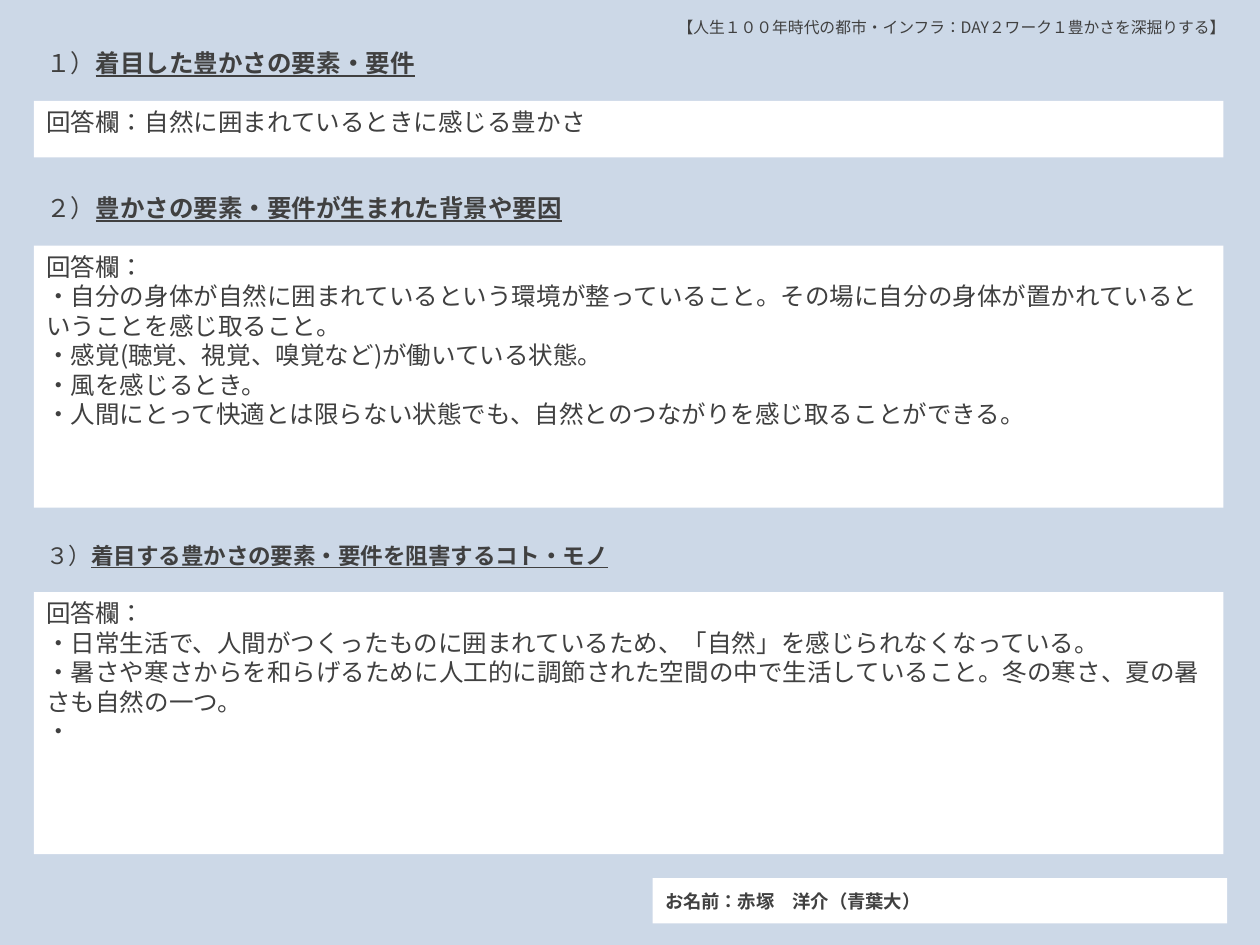
from lxml import etree
from pptx import Presentation
from pptx.dml.color import RGBColor
from pptx.enum.lang import MSO_LANGUAGE_ID
from pptx.enum.shapes import MSO_SHAPE
from pptx.enum.text import MSO_ANCHOR, PP_ALIGN
from pptx.oxml.ns import qn
from pptx.util import Inches, Pt

RECTANGLE = MSO_SHAPE.RECTANGLE
TOP, MIDDLE = MSO_ANCHOR.TOP, MSO_ANCHOR.MIDDLE
LEFT = PP_ALIGN.LEFT
JAPANESE = MSO_LANGUAGE_ID.JAPANESE
FONT = "Noto Sans CJK JP"
COLORS = {"background": "CCD8E7", "panel": "FFFFFF", "text": "404040"}

presentation = Presentation()
presentation.slide_width = Inches(10)
presentation.slide_height = Inches(7.5)
COLUMN = presentation.slide_width / 100
ROW = presentation.slide_height / 75
slide = presentation.slides.add_slide(presentation.slide_layouts[6])
slide.background.fill.solid()
slide.background.fill.fore_color.rgb = RGBColor.from_string(COLORS["background"])


def add_text(paragraphs, box, size=14, bold=False, panel=False, anchor=TOP, wrap=True):
    left, top, width, height = box
    place = [int(value) for value in (left * COLUMN, top * ROW, width * COLUMN, height * ROW)]
    if panel:
        shape = slide.shapes.add_shape(RECTANGLE, *place)
        shape.shadow.inherit = False
        shape.fill.solid()
        shape.fill.fore_color.rgb = RGBColor.from_string(COLORS["panel"])
        shape.line.fill.background()
    else:
        shape = slide.shapes.add_textbox(*place)
    frame = shape.text_frame
    frame.word_wrap = wrap
    frame.vertical_anchor = anchor
    for index, runs in enumerate(paragraphs):
        paragraph = frame.add_paragraph() if index else frame.paragraphs[0]
        paragraph.alignment = LEFT
        paragraph.line_spacing = 1.0
        for text, underlined in runs:
            run = paragraph.add_run()
            run.text = text
            font = run.font
            font.name = FONT
            font.size = Pt(size)
            font.bold = bold or underlined
            font.underline = underlined
            font.language_id = JAPANESE
            font.color.rgb = RGBColor.from_string(COLORS["text"])
            properties = run._r.get_or_add_rPr()
            etree.SubElement(properties, qn("a:ea")).set("typeface", FONT)


MARGIN, PANEL_WIDTH = 2.7, 94.4
HEADING_HEIGHT = 4.5

sections = [
    ("１）", "着目した豊かさの要素・要件", 14, 3.3, 32.1, 8, 4.5,
     ["回答欄：自然に囲まれているときに感じる豊かさ"]),
    ("２）", "豊かさの要素・要件が生まれた背景や要因", 14, 14.8, 47.7, 19.5, 20.8,
     ["回答欄：",
      "・自分の身体が自然に囲まれているという環境が整っていること。その場に自分の身体が置かれているということを感じ取ること。",
      "・感覚(聴覚、視覚、嗅覚など)が働いている状態。",
      "・風を感じるとき。",
      "・人間にとって快適とは限らない状態でも、自然とのつながりを感じ取ることができる。"]),
    ("３）", "着目する豊かさの要素・要件を阻害するコト・モノ", 12.9, 42.5, 48.4, 47, 20.8,
     ["回答欄：",
      "・日常生活で、人間がつくったものに囲まれているため、「自然」を感じられなくなっている。",
      "・暑さや寒さからを和らげるために人工的に調節された空間の中で生活していること。冬の寒さ、夏の暑さも自然の一つ。",
      "・"]),
]

for number, heading, size, heading_top, heading_width, panel_top, panel_height, answer in sections:
    add_text([[(number, False), (heading, True)]],
             (MARGIN, heading_top, heading_width, HEADING_HEIGHT), size=size, wrap=False)
    add_text([[(line, False)] for line in answer],
             (MARGIN, panel_top, PANEL_WIDTH, panel_height), panel=True)

add_text([[("お名前：赤塚　洋介（青葉大）", False)]], (51.8, 69.7, 45.6, 3.6),
         size=10.5, bold=True, panel=True, anchor=MIDDLE)
add_text([[("【人生１００年時代の都市・インフラ：DAY２ワーク１豊かさを深掘りする】", False)]],
         (52.8, 0.9, 48.3, 3), size=9, wrap=False)

presentation.save("out.pptx")
